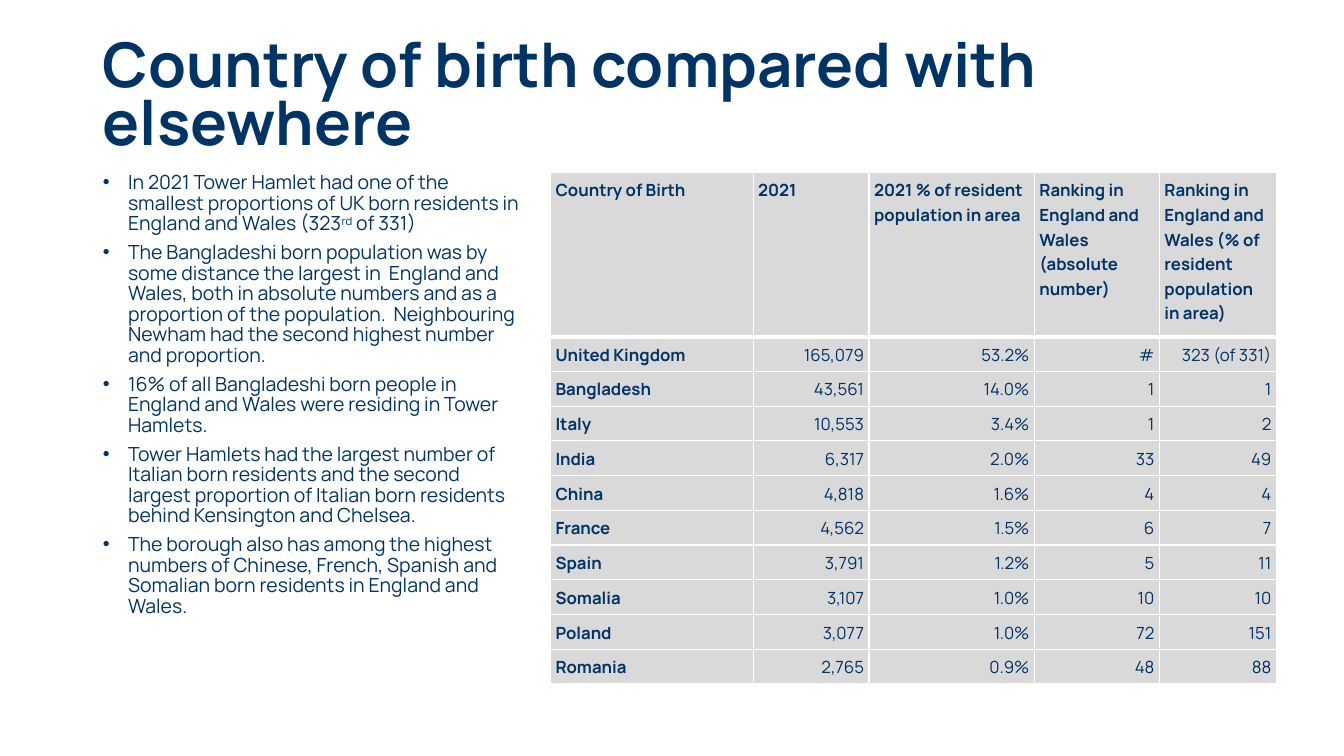
"""Build a slide comparing countries of birth in Tower Hamlets with elsewhere."""
from dataclasses import dataclass

from lxml import etree
from pptx import Presentation
from pptx.dml.color import RGBColor
from pptx.enum.text import MSO_ANCHOR, MSO_AUTO_SIZE, PP_ALIGN
from pptx.oxml.ns import qn
from pptx.util import Inches, Pt

LEFT, RIGHT = PP_ALIGN.LEFT, PP_ALIGN.RIGHT
TOP, MIDDLE = MSO_ANCHOR.TOP, MSO_ANCHOR.MIDDLE
NO_AUTOFIT = MSO_AUTO_SIZE.NONE
NAVY = RGBColor(0x00, 0x33, 0x66)
GREY = RGBColor(0xD9, 0xD9, 0xD9)
WHITE = RGBColor(0xFF, 0xFF, 0xFF)
FONT_NAME = "Manrope"
TITLE = "Country of birth compared with elsewhere"
HEADER_HEIGHT, ROW_HEIGHT = 1.63, 0.34
CELL_INSET = Inches(0.05)


@dataclass(frozen=True)
class Box:
    left: float
    top: float
    width: float
    height: float


@dataclass(frozen=True)
class Bullet:
    text: str
    superscript: str = ""
    ending: str = ""


@dataclass(frozen=True)
class Column:
    heading: str
    width: float


@dataclass(frozen=True)
class Country:
    name: str
    residents: str
    share: str
    number_rank: str
    share_rank: str

    def values(self) -> tuple[str, ...]:
        return self.name, self.residents, self.share, self.number_rank, self.share_rank


TITLE_BOX = Box(0.92, 0.26, 10.69, 1.45)
BODY_BOX = Box(0.92, 1.67, 4.36, 5.21)
BULLETS = (
    Bullet("In 2021 Tower Hamlet had one of the smallest proportions of UK born residents "
           "in England and Wales (323", "rd", " of 331)"),
    Bullet("The Bangladeshi born population was by some distance the largest in  England and "
           "Wales, both in absolute numbers and as a proportion of the population.  "
           "Neighbouring Newham had the second highest number and proportion."),
    Bullet("16% of all Bangladeshi born people in England and Wales were residing in "
           "Tower Hamlets."),
    Bullet("Tower Hamlets had the largest number of Italian born residents and the second "
           "largest proportion of Italian born residents behind Kensington and Chelsea."),
    Bullet("The borough also has among the highest numbers of Chinese, French, Spanish and "
           "Somalian born residents in England and Wales."),
)
COLUMNS = (
    Column("Country of Birth", 2.01),
    Column("2021", 1.15),
    Column("2021 % of resident population in area", 1.64),
    Column("Ranking in England and Wales (absolute number)", 1.24),
    Column("Ranking in England and Wales (% of resident population in area)", 1.16),
)
COUNTRIES = (
    Country("United Kingdom", "165,079", "53.2%", "#", "323 (of 331)"),
    Country("Bangladesh", "43,561", "14.0%", "1", "1"),
    Country("Italy", "10,553", "3.4%", "1", "2"),
    Country("India", "6,317", "2.0%", "33", "49"),
    Country("China", "4,818", "1.6%", "4", "4"),
    Country("France", "4,562", "1.5%", "6", "7"),
    Country("Spain", "3,791", "1.2%", "5", "11"),
    Country("Somalia", "3,107", "1.0%", "10", "10"),
    Country("Poland", "3,077", "1.0%", "72", "151"),
    Country("Romania", "2,765", "0.9%", "48", "88"),
)
TABLE_BOX = Box(5.46, 1.71, sum(column.width for column in COLUMNS),
                HEADER_HEIGHT + ROW_HEIGHT * len(COUNTRIES))


def apply(target, **formats) -> None:
    for name, value in formats.items():
        setattr(target, name, value)


def format_font(font, size: float, bold: bool) -> None:
    apply(font, name=FONT_NAME, size=Pt(size), bold=bold)
    font.color.rgb = NAVY


def place(shape, box: Box, anchor: MSO_ANCHOR) -> None:
    apply(shape, left=Inches(box.left), top=Inches(box.top),
          width=Inches(box.width), height=Inches(box.height))
    apply(shape.text_frame, word_wrap=True, auto_size=NO_AUTOFIT, vertical_anchor=anchor)


def draw_title(shape) -> None:
    place(shape, TITLE_BOX, MIDDLE)
    shape.text_frame.text = TITLE
    paragraph = shape.text_frame.paragraphs[0]
    apply(paragraph, alignment=LEFT, line_spacing=0.78)
    format_font(paragraph.runs[0].font, 44, True)


def add_bullet(paragraph, bullet: Bullet, space_before: float) -> None:
    properties = paragraph._p.get_or_add_pPr()
    properties.set("marL", str(Inches(0.25)))
    properties.set("indent", str(Inches(-0.25)))
    etree.SubElement(properties, qn("a:buChar"), char="•")
    apply(paragraph, alignment=LEFT, line_spacing=0.88,
          space_before=Pt(space_before), space_after=Pt(0))
    for text in filter(None, (bullet.text, bullet.superscript, bullet.ending)):
        run = paragraph.add_run()
        run.text = text
        format_font(run.font, 13.9, False)
        if text == bullet.superscript:
            run._r.get_or_add_rPr().set("baseline", "30000")


def draw_bullets(shape) -> None:
    place(shape, BODY_BOX, TOP)
    frame = shape.text_frame
    for index, bullet in enumerate(BULLETS):
        paragraph = frame.add_paragraph() if index else frame.paragraphs[0]
        add_bullet(paragraph, bullet, 6 if index else 0)


def set_borders(cell, top: float, bottom: float) -> None:
    properties = cell._tc.get_or_add_tcPr()
    widths = {"a:lnL": 1, "a:lnR": 1, "a:lnT": top, "a:lnB": bottom}
    for position, (tag, width) in enumerate(widths.items()):
        line = etree.Element(qn(tag), w=str(Pt(width)))
        fill = etree.SubElement(line, qn("a:solidFill"))
        etree.SubElement(fill, qn("a:srgbClr"), val=str(WHITE))
        properties.insert(position, line)


def fill_cell(cell, text: str, row: int, column: int) -> None:
    apply(cell, margin_left=CELL_INSET, margin_right=CELL_INSET, margin_top=CELL_INSET,
          margin_bottom=CELL_INSET, vertical_anchor=TOP, text=text)
    cell.fill.solid()
    cell.fill.fore_color.rgb = GREY
    set_borders(cell, 3 if row == 1 else 1, 3 if row == 0 else 1)
    is_heading = row == 0 or column == 0
    paragraph = cell.text_frame.paragraphs[0]
    apply(paragraph, alignment=LEFT if is_heading else RIGHT,
          line_spacing=1.07, space_after=Pt(8))
    format_font(paragraph.runs[0].font, 12, is_heading)


def draw_table(slide) -> None:
    rows = [tuple(column.heading for column in COLUMNS)]
    rows += [country.values() for country in COUNTRIES]
    table = slide.shapes.add_table(
        len(rows), len(COLUMNS), Inches(TABLE_BOX.left), Inches(TABLE_BOX.top),
        Inches(TABLE_BOX.width), Inches(TABLE_BOX.height)).table
    for index, column in enumerate(COLUMNS):
        table.columns[index].width = Inches(column.width)
    for row, texts in enumerate(rows):
        table.rows[row].height = Inches(ROW_HEIGHT if row else HEADER_HEIGHT)
        for column, text in enumerate(texts):
            fill_cell(table.cell(row, column), text, row, column)


def main() -> None:
    presentation = Presentation()
    apply(presentation, slide_width=Inches(13.33), slide_height=Inches(7.5))
    slide = presentation.slides.add_slide(presentation.slide_layouts[1])
    draw_title(slide.shapes.title)
    draw_bullets(slide.placeholders[1])
    draw_table(slide)
    presentation.save("out.pptx")


if __name__ == "__main__":
    main()
